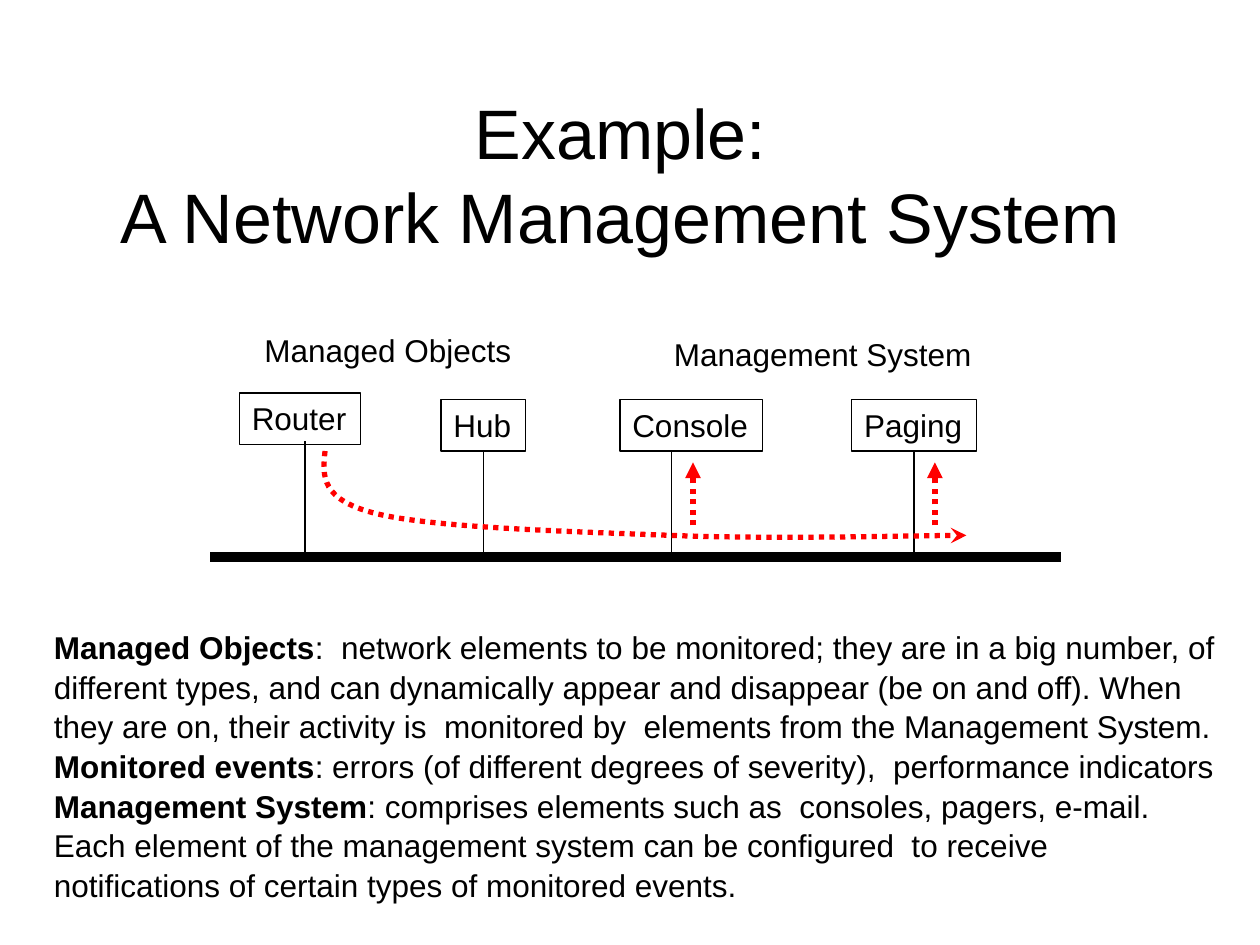
from collections import namedtuple
from dataclasses import dataclass

from lxml.etree import SubElement
from pptx import Presentation
from pptx.dml.color import RGBColor
from pptx.enum.dml import MSO_LINE
from pptx.enum.shapes import MSO_CONNECTOR, MSO_SHAPE
from pptx.enum.text import MSO_ANCHOR, MSO_AUTO_SIZE, PP_ALIGN
from pptx.oxml.ns import qn
from pptx.util import Pt

PX = 9144  # EMU in one px, 100 px to the inch

Box = namedtuple("Box", "left top width height")


@dataclass(frozen=True)
class Theme:
    font: str = "Arial"
    ink: RGBColor = RGBColor(0, 0, 0)
    event: RGBColor = RGBColor(255, 0, 0)
    title_size: int = 40
    text_size: int = 18
    thin: float = 0.75
    flow: float = 3
    bus: float = 6
    body_spacing: float = 1.05


THEME = Theme()

# name, left, top, width, height, link x (None: middle of the box), link top
NODES = [
    ("Router", 23, 54, 96, 41, 75, 92),
    ("Hub", 183, 59, 67, 41, None, 100),
    ("Console", 325, 59, 113, 41, 366, 100),
    ("Paging", 509, 59, 99, 41, None, 100),
]
GROUP_LABELS = [
    ("Managed Objects", 33, 0, 216, 40),
    ("Management System", 358, 3, 256, 40),
]
BUS_Y = 184
NOTIFIED_X = (383, 575)
# Start point, then two control points and an end point for each curve
EVENT_ROUTE = [
    (91, 100),
    (89, 120), (87, 139), (133, 150),
    (179, 161), (289, 164), (366, 167),
    (444, 170), (561, 167), (600, 167),
]
DEFINITIONS = [
    ("Managed Objects",
     ":  network elements to be monitored; they are in a big number, of "
     "different types, and can dynamically appear and disappear (be on and off). "
     "When they are on, their activity is  monitored by  elements from the "
     "Management System."),
    ("Monitored events",
     ": errors (of different degrees of severity),  performance indicators"),
    ("Management System",
     ": comprises elements such as  consoles, pagers, e-mail. Each element of the "
     "management system can be configured  to receive notifications of certain "
     "types of monitored events."),
]


def emu(*lengths):
    return [length * PX for length in lengths]


def style_paragraph(para, size, align=PP_ALIGN.LEFT):
    para.alignment = align
    para.font.name = THEME.font
    para.font.size = Pt(size)
    para.font.color.rgb = THEME.ink


def style_line(line, color, width, arrow=None):
    """Colour a line; one with an arrowhead is an event flow and is dotted."""
    line.color.rgb = color
    line.width = Pt(width)
    if arrow:
        line.dash_style = MSO_LINE.ROUND_DOT
        SubElement(line._get_or_add_ln(), qn("a:tailEnd"), type=arrow)


def add_text(page, box, wrap=True):
    frame = page.shapes.add_textbox(*emu(*box)).text_frame
    frame.word_wrap = wrap
    frame.auto_size = MSO_AUTO_SIZE.SHAPE_TO_FIT_TEXT if not wrap else MSO_AUTO_SIZE.NONE
    return frame


def add_line(page, start, end, color, width, arrow=None):
    connector = page.shapes.add_connector(
        MSO_CONNECTOR.STRAIGHT, *[round(v) for v in emu(*start, *end)])
    style_line(connector.line, color, width, arrow)
    SubElement(connector._element.spPr, qn("a:effectLst"))
    return connector


def add_node(page, name, box):
    node = page.shapes.add_shape(MSO_SHAPE.RECTANGLE, *emu(*box))
    node.shadow.inherit = False
    node.fill.background()
    style_line(node.line, THEME.ink, THEME.thin)
    frame = node.text_frame
    frame.word_wrap = False
    frame.auto_size = MSO_AUTO_SIZE.SHAPE_TO_FIT_TEXT
    frame.vertical_anchor = MSO_ANCHOR.TOP
    frame.text = name
    style_paragraph(frame.paragraphs[0], THEME.text_size)
    return node


def add_event_curve(page, points):
    """Draw cubic curves by turning each three line steps into one curve step."""
    builder = page.shapes.build_freeform(*points[0], scale=PX)
    builder.add_line_segments(points[1:], close=False)
    curve = builder.convert_to_shape()
    curve.shadow.inherit = False
    curve.fill.background()
    style_line(curve.line, THEME.event, THEME.flow, "stealth")
    outline = next(curve._element.iter(qn("a:path")))
    steps = outline.findall(qn("a:lnTo"))
    for first in range(0, len(steps), 3):
        bend = SubElement(outline, qn("a:cubicBezTo"))
        for step in steps[first:first + 3]:
            bend.append(step[0])
            outline.remove(step)


def draw_title(page, box):
    frame = add_text(page, box)
    frame.vertical_anchor = MSO_ANCHOR.MIDDLE
    frame.text = "Example: \vA Network Management System "
    style_paragraph(frame.paragraphs[0], THEME.title_size, PP_ALIGN.CENTER)


def draw_network(page, box):
    def at(x, y):
        return box.left + x, box.top + y

    for label, x, y, width, height in GROUP_LABELS:
        frame = add_text(page, Box(*at(x, y), width, height), wrap=False)
        frame.text = label
        style_paragraph(frame.paragraphs[0], THEME.text_size)

    add_line(page, at(0, BUS_Y), at(box.width, BUS_Y), THEME.ink, THEME.bus)
    for name, x, y, width, height, link_x, link_top in NODES:
        node = add_node(page, name, Box(*at(x, y), width, height))
        stem_x = x + width / 2 if link_x is None else link_x
        stem = add_line(page, at(stem_x, link_top), at(stem_x, BUS_Y),
                        THEME.ink, THEME.thin)
        if link_x is None:
            stem.begin_connect(node, 2)

    add_event_curve(page, [at(*point) for point in EVENT_ROUTE])
    for x in NOTIFIED_X:
        add_line(page, at(x, 159), at(x, 109), THEME.event, THEME.flow, "triangle")


def draw_definitions(page, box):
    frame = add_text(page, box)
    for index, (term, meaning) in enumerate(DEFINITIONS):
        para = frame.add_paragraph() if index else frame.paragraphs[0]
        style_paragraph(para, THEME.text_size)
        para.line_spacing = THEME.body_spacing
        for words, bold in ((term, True), (meaning, False)):
            span = para.add_run()
            span.text = words
            span.font.bold = bold


def main():
    deck = Presentation()
    deck.slide_width, deck.slide_height = emu(1000, 750)
    page = deck.slides.add_slide(deck.slide_layouts[6])
    draw_title(page, Box(50, 75, 900, 125))
    draw_network(page, Box(167, 258, 675, 184))
    draw_definitions(page, Box(33, 492, 942, 263))
    deck.save("out.pptx")


if __name__ == "__main__":
    main()
